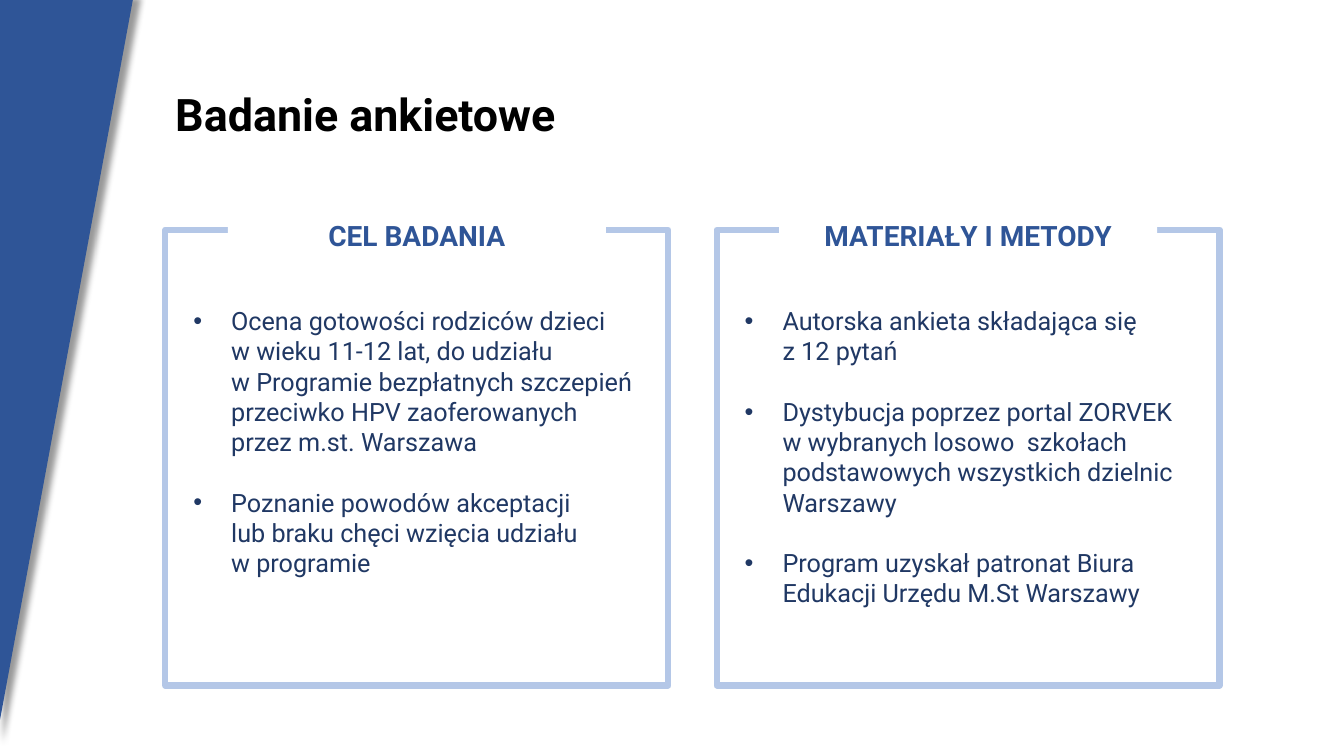
from dataclasses import dataclass

from lxml import etree
from pptx import Presentation
from pptx.dml.color import RGBColor
from pptx.enum.shapes import MSO_SHAPE
from pptx.enum.text import MSO_ANCHOR as Anchor, PP_ALIGN as Align
from pptx.oxml import parse_xml
from pptx.oxml.ns import nsdecls, qn
from pptx.shapes.autoshape import Shape
from pptx.slide import Slide
from pptx.text.text import _Paragraph as Paragraph
from pptx.util import Pt

BLACK = RGBColor(0x00, 0x00, 0x00)
WHITE = RGBColor(0xFF, 0xFF, 0xFF)
BLUE = RGBColor(0x2F, 0x55, 0x97)
NAVY = RGBColor(0x20, 0x38, 0x64)
PALE_BLUE = RGBColor(0xB4, 0xC7, 0xE7)

FONT = "Roboto"
PANEL_TOP, PANEL_WIDTH, PANEL_HEIGHT = 164.2, 359.3, 325.4
HEADING_TOP, HEADING_WIDTH, HEADING_HEIGHT = 133.2, 270, 69.8
BULLET_INDENT = 27
BULLET_GAP = 21.6


@dataclass(frozen=True)
class Panel:
    """A framed list; each bullet is a tuple of lines."""
    left: float
    heading: str
    bullets: tuple[tuple[str, ...], ...]


PANELS = (
    Panel(118.1, "CEL BADANIA", (
        ("Ocena gotowości rodziców dzieci ",
         "w wieku 11-12 lat, do udziału ",
         "w Programie bezpłatnych szczepień przeciwko HPV zaoferowanych "
         "przez m.st. Warszawa"),
        ("Poznanie powodów akceptacji ",
         "lub braku chęci wzięcia udziału ",
         "w programie"),
    )),
    Panel(511.9, "MATERIAŁY I METODY", (
        ("Autorska ankieta składająca się ", "z 12 pytań"),
        ("Dystybucja poprzez portal ZORVEK w wybranych losowo  szkołach "
         "podstawowych wszystkich dzielnic Warszawy",),
        ("Program uzyskał patronat Biura Edukacji Urzędu M.St Warszawy",),
    )),
)


def write(p: Paragraph, *lines: str, size: float, color: RGBColor,
          bold: bool = False, align: Align = Align.LEFT) -> None:
    p.alignment = align
    for i, line in enumerate(lines):
        if i:
            p.add_line_break()
        r = p.add_run()
        r.text = line
        r.font.name = FONT
        r.font.size = Pt(size)
        r.font.bold = bold
        r.font.color.rgb = color


def add_bullet(p: Paragraph) -> None:
    pPr = p._p.get_or_add_pPr()
    pPr.set("marL", str(Pt(BULLET_INDENT)))
    pPr.set("indent", str(-Pt(BULLET_INDENT)))
    etree.SubElement(pPr, qn("a:buFont"), typeface="Arial")
    etree.SubElement(pPr, qn("a:buChar"), char="•")


def add_box(s: Slide, left: float, top: float, width: float, height: float) -> Shape:
    """Add a white rectangle without outline or shadow."""
    sp = s.shapes.add_shape(MSO_SHAPE.RECTANGLE, Pt(left), Pt(top), Pt(width), Pt(height))
    sp.shadow.inherit = False
    sp.fill.solid()
    sp.fill.fore_color.rgb = WHITE
    sp.line.fill.background()
    sp.text_frame.word_wrap = True
    return sp


def add_wedge(s: Slide) -> None:
    """Add the blue triangle along the left edge, with its shadow."""
    builder = s.shapes.build_freeform(-2, -6, scale=Pt(1))
    builder.add_line_segments([(-2, 525), (95.5, -6)], close=True)
    sp = builder.convert_to_shape()
    sp.fill.solid()
    sp.fill.fore_color.rgb = BLUE
    sp.line.fill.background()
    sp._element.spPr.append(parse_xml(
        f'<a:effectLst {nsdecls("a")}>'
        f'<a:outerShdw blurRad="{Pt(4)}" dist="{Pt(6)}" dir="2700000" algn="tl" rotWithShape="0">'
        '<a:srgbClr val="000000"><a:alpha val="40000"/></a:srgbClr>'
        '</a:outerShdw></a:effectLst>'))


def add_title(s: Slide, text: str) -> None:
    tf = s.shapes.add_textbox(Pt(118.1), Pt(28.8), Pt(748), Pt(104.4)).text_frame
    tf.word_wrap = True
    tf.vertical_anchor = Anchor.MIDDLE
    write(tf.paragraphs[0], text, size=32, color=BLACK, bold=True)


def add_panel(s: Slide, panel: Panel) -> None:
    frame = add_box(s, panel.left, PANEL_TOP, PANEL_WIDTH, PANEL_HEIGHT)
    frame.line.color.rgb = PALE_BLUE
    frame.line.width = Pt(4.5)
    tf = frame.text_frame
    tf.vertical_anchor = Anchor.TOP
    tf.margin_left, tf.margin_top = Pt(20), Pt(54)
    tf.margin_right, tf.margin_bottom = Pt(25), Pt(3.6)
    for i, lines in enumerate(panel.bullets):
        p = tf.add_paragraph() if i else tf.paragraphs[0]
        p.space_before = Pt(BULLET_GAP if i else 0)
        add_bullet(p)
        write(p, *lines, size=18, color=NAVY)

    inset = (PANEL_WIDTH - HEADING_WIDTH) / 2
    heading = add_box(s, panel.left + inset, HEADING_TOP, HEADING_WIDTH, HEADING_HEIGHT)
    heading.text_frame.vertical_anchor = Anchor.MIDDLE
    write(heading.text_frame.paragraphs[0], panel.heading,
          size=20, color=BLUE, bold=True, align=Align.CENTER)


def main() -> None:
    prs = Presentation()
    prs.slide_width, prs.slide_height = Pt(960), Pt(540)
    s = prs.slides.add_slide(prs.slide_layouts[6])
    add_wedge(s)
    add_title(s, "Badanie ankietowe")
    for panel in PANELS:
        add_panel(s, panel)
    prs.save("out.pptx")


if __name__ == "__main__":
    main()
